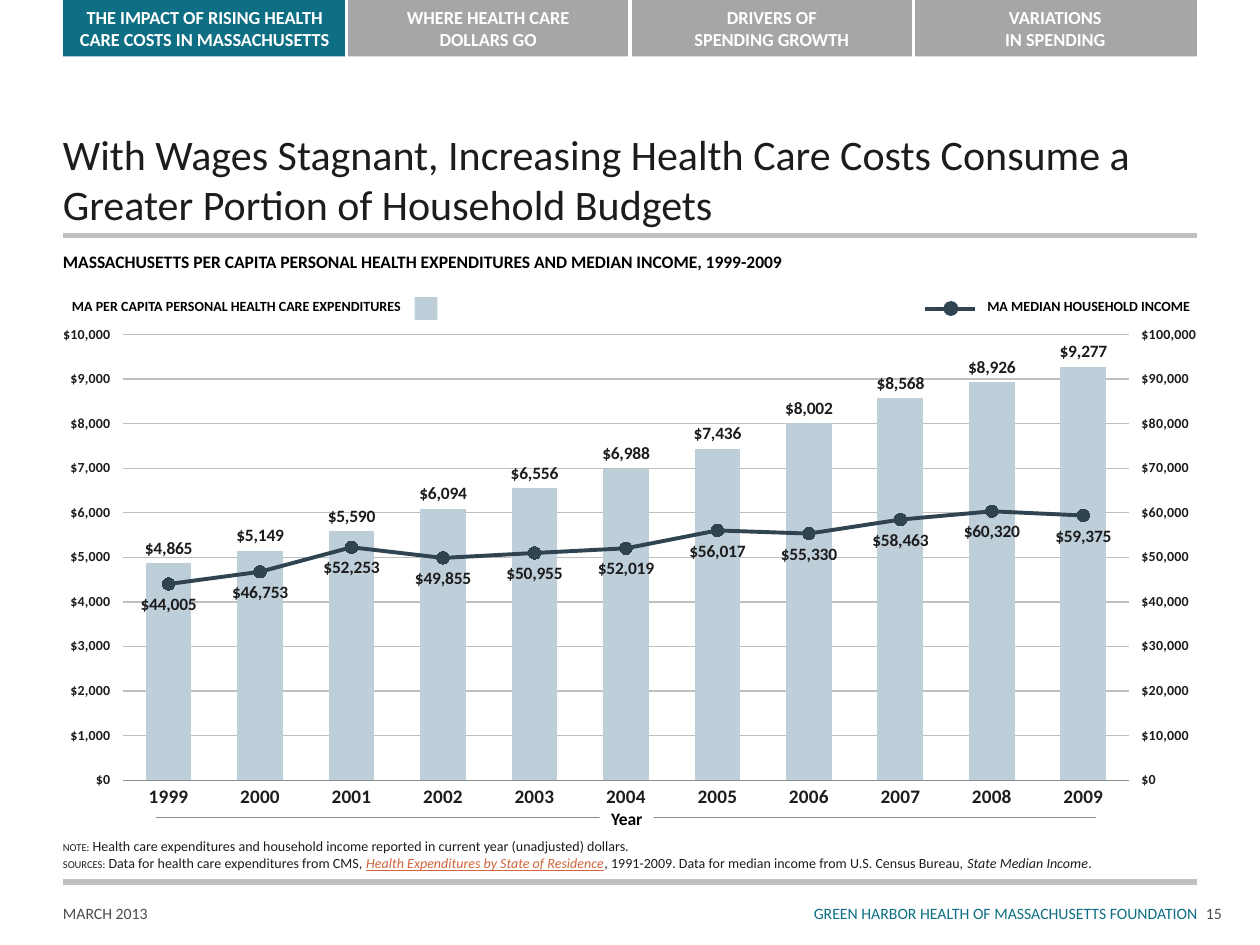
import copy

import lxml.etree
import pptx
import pptx.chart.data
import pptx.dml.color
import pptx.enum.chart
import pptx.enum.shapes
import pptx.enum.text
import pptx.oxml
import pptx.oxml.ns
import pptx.util

Cm = pptx.util.Cm
Pt = pptx.util.Pt
RGBColor = pptx.dml.color.RGBColor
qn = pptx.oxml.ns.qn
Align = pptx.enum.text.PP_ALIGN
Anchor = pptx.enum.text.MSO_ANCHOR
Shape = pptx.enum.shapes.MSO_SHAPE
Label = pptx.enum.chart.XL_LABEL_POSITION
Tick = pptx.enum.chart.XL_TICK_MARK

WHITE = RGBColor(0xFF, 0xFF, 0xFF)
BLACK = RGBColor(0x00, 0x00, 0x00)
INK = RGBColor(0x1C, 0x1C, 0x1C)
FOOTER_GRAY = RGBColor(0x4B, 0x4B, 0x4B)
TEAL = RGBColor(0x0E, 0x6E, 0x83)
TAB_GRAY = RGBColor(0xA6, 0xA6, 0xA6)
RULE_GRAY = RGBColor(0xC0, 0xC0, 0xC0)
GRID_GRAY = RGBColor(0xBF, 0xBF, 0xBF)
AXIS_GRAY = RGBColor(0x8E, 0x8E, 0x8E)
BAR_BLUE = RGBColor(0xBE, 0xCF, 0xDA)
NAVY = RGBColor(0x2F, 0x44, 0x50)
LINK_ORANGE = RGBColor(0xD3, 0x64, 0x3B)

FONT = "Calibri"
DOLLARS = '"$"#,##0'
LEFT, WIDTH = 1.27, 22.86
RIGHT = LEFT + WIDTH

deck = pptx.Presentation()
deck.slide_width, deck.slide_height = Cm(25.4), Cm(19.05)
page = deck.slides.add_slide(deck.slide_layouts[6])


def add_line(x1, y1, x2, y2, color, weight):
    line = page.shapes.add_connector(
        pptx.enum.shapes.MSO_CONNECTOR.STRAIGHT, Cm(x1), Cm(y1), Cm(x2), Cm(y2))
    line.line.color.rgb = color
    line.line.width = Pt(weight)
    lxml.etree.SubElement(line._element.spPr, qn("a:effectLst"))


def add_box(place, paras=(), fill=None, kind=Shape.RECTANGLE, align=Align.LEFT,
            anchor=Anchor.TOP, inset=(0, 0.13)):
    place = [Cm(length) for length in place]
    if fill is None:
        box = page.shapes.add_textbox(*place)
    else:
        box = page.shapes.add_shape(kind, *place)
        box.shadow.inherit = False
        box.fill.solid()
        box.fill.fore_color.rgb = fill
        box.line.fill.background()
    frame = box.text_frame
    frame.word_wrap = True
    frame.vertical_anchor = anchor
    frame.margin_left = frame.margin_right = Cm(inset[0])
    frame.margin_top = frame.margin_bottom = Cm(inset[1])
    for number, spans in enumerate(paras):
        para = frame.add_paragraph() if number else frame.paragraphs[0]
        para.alignment = align
        for text, size, color, style in spans:
            for row, part in enumerate(text.split("\n")):
                if row:
                    para.add_line_break()
                span = para.add_run()
                span.text = part
                span.font.name = FONT
                span.font.size = Pt(size)
                span.font.color.rgb = color
                span.font.bold = "b" in style
                span.font.italic = "i" in style
                span.font.underline = "u" in style


for y in (17.78, 4.75):
    add_line(LEFT, y, RIGHT, y, RULE_GRAY, 3)

tabs = ["THE IMPACT OF RISING HEALTH CARE COSTS IN MASSACHUSETTS",
        "WHERE HEALTH CARE\nDOLLARS GO",
        "DRIVERS OF\nSPENDING GROWTH",
        "VARIATIONS\nIN SPENDING"]
tab_width = WIDTH / len(tabs)
for number, text in enumerate(tabs):
    add_box((LEFT + number * tab_width, 0, tab_width, 1.14),
            [[(text, 10.5, WHITE, "b")]], TAB_GRAY if number else TEAL,
            align=Align.CENTER, anchor=Anchor.BOTTOM, inset=(0.13, 0.13))
for number in range(1, len(tabs)):
    x = LEFT + number * tab_width
    add_line(x, 0, x, 1.14, WHITE, 2)

footers = [(13.18, 10.95, "GREEN HARBOR HEALTH OF MASSACHUSETTS FOUNDATION", TEAL, Align.RIGHT),
           (LEFT, 2.54, "MARCH 2013", FOOTER_GRAY, Align.LEFT),
           (24.31, 1.09, "15", FOOTER_GRAY, Align.LEFT)]
for x, width, text, color, align in footers:
    add_box((x, 18.21, width, 0.81), [[(text, 9, color, "")]], align=align, inset=(0, 0))

add_box((LEFT, 2.54, WIDTH, 2.21),
        [[("With Wages Stagnant, Increasing Health Care Costs Consume a "
           "Greater Portion of Household Budgets", 24, INK, "")]], anchor=Anchor.BOTTOM)
add_box((LEFT, 4.93, WIDTH, 0.69),
        [[("MASSACHUSETTS PER CAPITA PERSONAL HEALTH EXPENDITURES AND MEDIAN INCOME, "
           "1999-2009", 10, BLACK, "b")]])

note = [("NOTE", 6, INK, ""), (":", 6, BLACK, ""), (" ", 8, BLACK, ""),
        ("Health care expenditures and household income reported in current year "
         "(unadjusted) dollars.", 8, INK, "")]
sources = [("SOURCES", 6, INK, ""), (":", 6, BLACK, ""), (" ", 8, BLACK, ""),
           ("Data for health care expenditures from CMS, ", 8, INK, ""),
           ("Health Expenditures by State of Residence", 8, LINK_ORANGE, "iu"),
           (", 1991-2009. Data for median income from U.S. Census Bureau, ", 8, INK, ""),
           ("State Median Income", 8, INK, "i"), (".", 8, INK, "")]
add_box((LEFT, 16.76, WIDTH, 0.94), [note, sources], anchor=Anchor.BOTTOM)

add_line(3.15, 16.48, 22.1, 16.48, AXIS_GRAY, 0.75)
add_box((12.09, 16.15, 1.09, 0.69), [[("Year", 10, BLACK, "b")]], WHITE, align=Align.CENTER)

chart_data = pptx.chart.data.CategoryChartData(number_format=DOLLARS)
chart_data.categories = [str(year) for year in range(1999, 2010)]
chart_data.add_series("MA per capita personal health care expenditures", (
    4865, 5149, 5590, 6094, 6556, 6988, 7436, 8002, 8568, 8926, 9277))
chart_data.add_series("MA median household income", (
    44005, 46753, 52253, 49855, 50955, 52019, 56017, 55330, 58463, 60320, 59375))
chart = page.shapes.add_chart(
    pptx.enum.chart.XL_CHART_TYPE.COLUMN_CLUSTERED,
    Cm(LEFT), Cm(6.55), Cm(WIDTH), Cm(9.75), chart_data).chart
chart.has_legend = False
chart.has_title = False
chart.font.name = FONT
chart.font.size = Pt(18)
chart.font.color.rgb = INK

for axis, size in ((chart.category_axis, 11), (chart.value_axis, 8)):
    axis.tick_labels.font.size = Pt(size)
    axis.tick_labels.font.bold = True
    axis.tick_labels.font.name = FONT
    axis.tick_labels.font.color.rgb = INK
    axis.minor_tick_mark = Tick.NONE
chart.category_axis.major_tick_mark = Tick.NONE
chart.category_axis.format.line.color.rgb = AXIS_GRAY
value_axis = chart.value_axis
value_axis.major_tick_mark = Tick.CROSS
value_axis.minimum_scale, value_axis.maximum_scale = 0, 10000
value_axis.major_unit = 1000
value_axis.tick_labels.number_format = DOLLARS
value_axis.tick_labels.number_format_is_linked = False
value_axis.format.line.fill.background()
value_axis.major_gridlines.format.line.color.rgb = GRID_GRAY
value_axis.major_gridlines.format.line.width = Pt(0.75)

bars = chart.plots[0]
bars.gap_width, bars.overlap, bars.vary_by_categories = 100, 100, False

plot_area = chart._chartSpace.chart.plotArea
bar_chart = plot_area.find(qn("c:barChart"))
line_chart = pptx.oxml.parse_xml(
    '<c:lineChart xmlns:c="http://schemas.openxmlformats.org/drawingml/2006/chart">'
    '<c:grouping val="standard"/><c:varyColors val="0"/><c:marker val="1"/>'
    '<c:axId val="5001"/><c:axId val="5002"/></c:lineChart>')
income = bar_chart.findall(qn("c:ser"))[1]
line_chart.insert(2, income)
bar_chart.addnext(line_chart)

right_axis = copy.deepcopy(value_axis._element)
hidden_axis = copy.deepcopy(chart.category_axis._element)
for parent, tag in ((income, "c:invertIfNegative"), (right_axis, "c:majorGridlines")):
    for child in parent.findall(qn(tag)):
        parent.remove(child)
settings = [(right_axis, {"axId": "5002", "crossAx": "5001", "axPos": "r", "crosses": "max",
                          "scaling/c:max": "100000", "majorUnit": "10000"}),
            (hidden_axis, {"axId": "5001", "crossAx": "5002", "delete": "1"})]
for axis, values in settings:
    for tag, value in values.items():
        axis.find("c:" + tag, {"c": pptx.oxml.ns.nsuri("c")}).set("val", value)
    value_axis._element.addnext(axis)

for layout in plot_area.findall(qn("c:layout")):
    plot_area.remove(layout)
layout = lxml.etree.Element(qn("c:layout"))
plot_area.insert(0, layout)
manual = lxml.etree.SubElement(layout, qn("c:manualLayout"))
for tag, value in (("layoutTarget", "inner"), ("xMode", "edge"), ("yMode", "edge"),
                   ("x", "0.05"), ("y", "0.02"), ("w", "0.89"), ("h", "0.93")):
    lxml.etree.SubElement(manual, qn("c:" + tag)).set("val", value)

bar_series, line_series = (plot.series[0] for plot in chart.plots)
bar_series.format.fill.solid()
bar_series.format.fill.fore_color.rgb = BAR_BLUE
line_series.smooth = False
line_series.format.line.color.rgb = NAVY
line_series.format.line.width = Pt(2.25)
marker = line_series.marker
marker.style = pptx.enum.chart.XL_MARKER_STYLE.CIRCLE
marker.size = 7
marker.format.fill.solid()
marker.format.fill.fore_color.rgb = NAVY
marker.format.line.color.rgb = NAVY
for series, position in ((bar_series, Label.OUTSIDE_END), (line_series, Label.BELOW)):
    labels = series.data_labels
    labels.show_value = True
    labels.position = position
    labels.number_format = DOLLARS
    labels.number_format_is_linked = False
    labels.font.size = Pt(10)
    labels.font.bold = True
    labels.font.name = FONT
    labels.font.color.rgb = INK

add_box((1.45, 5.87, 6.8, 0.69),
        [[("MA PER CAPITA PERSONAL HEALTH CARE EXPENDITURES", 8, BLACK, "b")]])
add_box((8.36, 5.99, 0.46, 0.46), fill=BAR_BLUE)
add_box((16.33, 5.87, 7.67, 0.69),
        [[("MA MEDIAN HOUSEHOLD INCOME", 8, BLACK, "b")]], align=Align.RIGHT)
add_line(18.64, 6.22, 19.66, 6.22, NAVY, 2.25)
add_box((19.02, 6.07, 0.3, 0.3), fill=NAVY, kind=Shape.OVAL)

deck.save("out.pptx")
